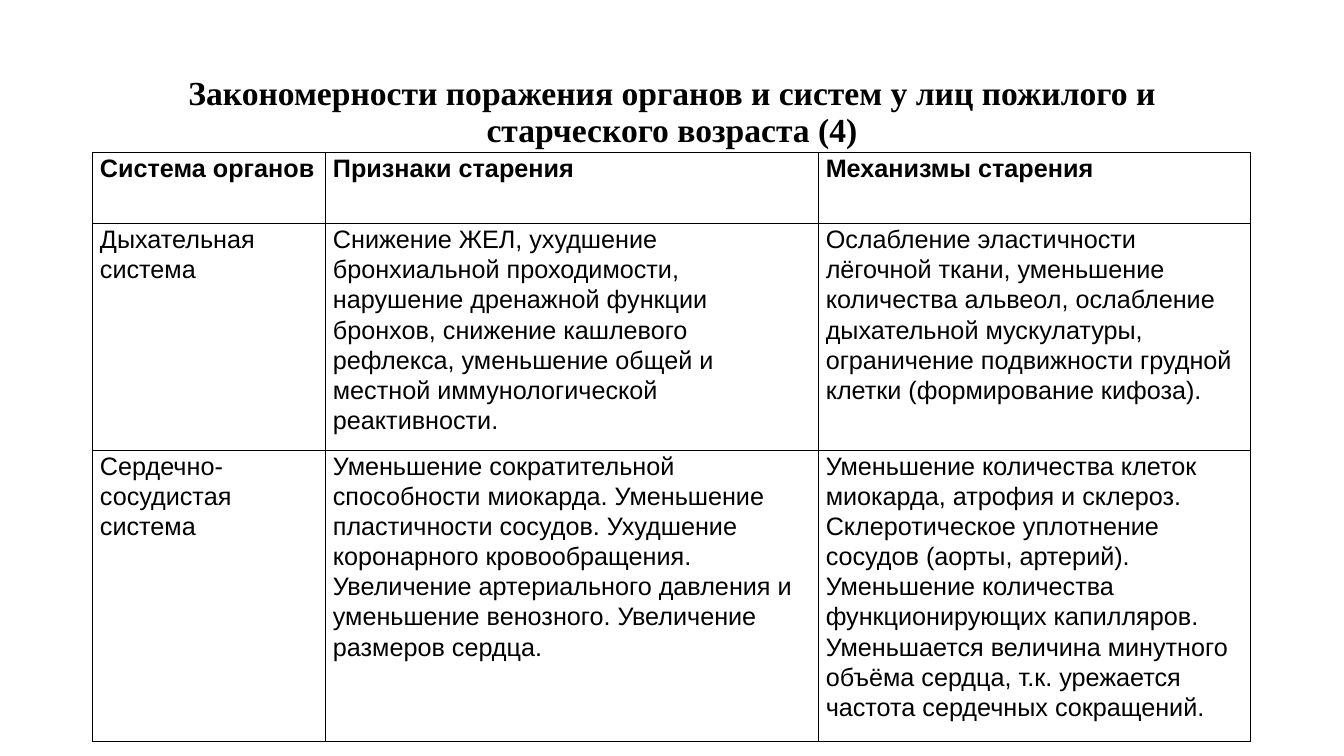
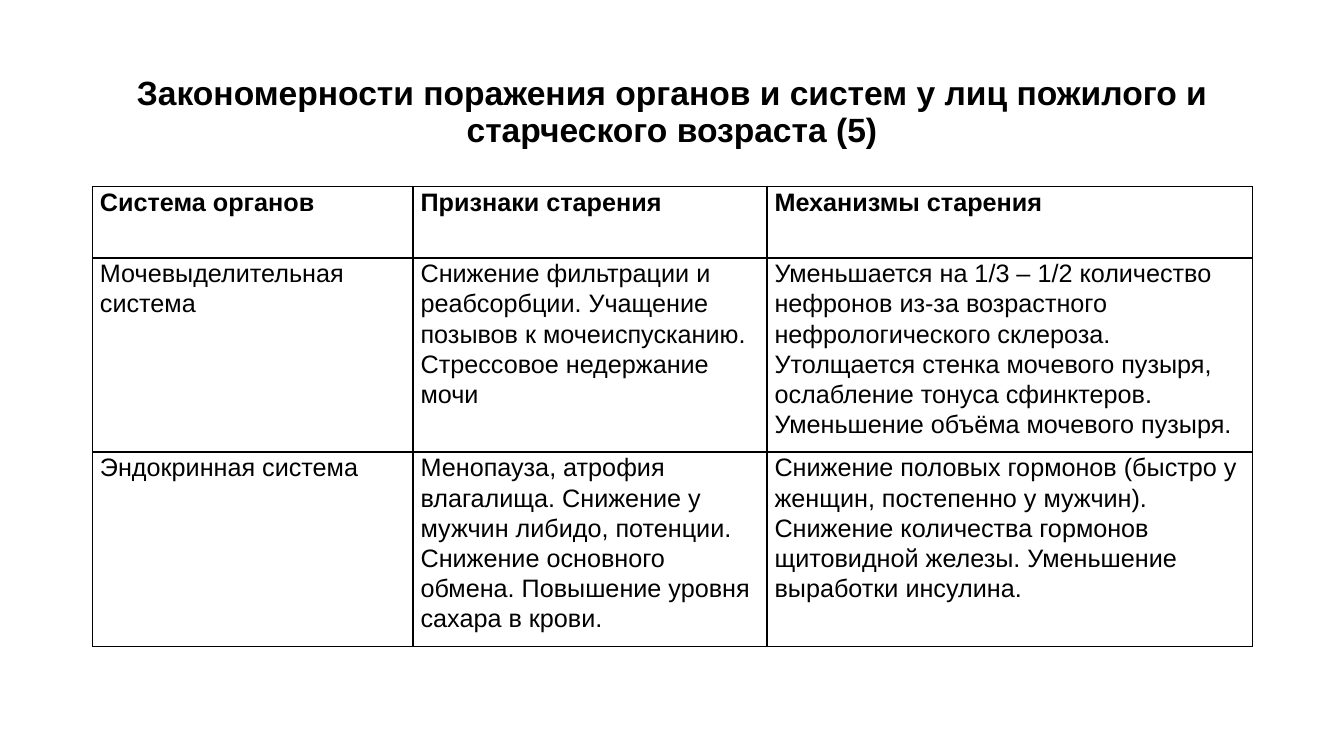
"""Build two slides with tables on ageing of organs and systems."""
import pptx
import pptx.dml.color
import pptx.enum.text
import pptx.util
from lxml import etree
from pptx.util import Cm, Pt

TITLE = "Закономерности поражения органов и систем у лиц пожилого и старческого возраста ({})"
HEADERS = ["Система органов", "Признаки старения", "Механизмы старения"]
SLIDES = [
    {
        "number": 4,
        "title_font": "Times New Roman",
        "top": 3.84,
        "widths": [5.87, 12.42, 10.9],
        "heights": [1.8, 5.33, 6.85],
        "systems": [
            (
                "Дыхательная система",
                "Снижение ЖЕЛ, ухудшение бронхиальной проходимости, нарушение дренажной "
                "функции бронхов, снижение кашлевого рефлекса, уменьшение общей и местной "
                "иммунологической реактивности.",
                "Ослабление эластичности лёгочной ткани, уменьшение количества альвеол, "
                "ослабление дыхательной мускулатуры, ограничение подвижности грудной клетки "
                "(формирование кифоза).",
            ),
            (
                "Сердечно-сосудистая система",
                "Уменьшение сократительной способности миокарда. Уменьшение пластичности "
                "сосудов. Ухудшение коронарного кровообращения. Увеличение артериального "
                "давления и уменьшение венозного. Увеличение размеров сердца.",
                "Уменьшение количества клеток миокарда, атрофия и склероз. Склеротическое "
                "уплотнение сосудов (аорты, артерий). Уменьшение количества функционирующих "
                "капилляров. Уменьшается величина минутного объёма сердца, т.к. урежается "
                "частота сердечных сокращений.",
            ),
        ],
    },
    {
        "number": 5,
        "title_font": "Arial",
        "top": 4.7,
        "widths": [8.08, 8.92, 12.23],
        "heights": [1.8, 4.57, 4.57],
        "systems": [
            (
                "Мочевыделительная система",
                "Снижение фильтрации и реабсорбции. Учащение позывов к мочеиспусканию. "
                "Стрессовое недержание мочи",
                "Уменьшается на 1/3 – 1/2 количество нефронов из-за возрастного "
                "нефрологического склероза. Утолщается стенка мочевого пузыря, ослабление "
                "тонуса сфинктеров. Уменьшение объёма мочевого пузыря.",
            ),
            (
                "Эндокринная система",
                "Менопауза, атрофия влагалища. Снижение у мужчин либидо, потенции. Снижение "
                "основного обмена. Повышение уровня сахара в крови.",
                "Снижение половых гормонов (быстро у женщин, постепенно у мужчин). Снижение "
                "количества гормонов щитовидной железы. Уменьшение выработки инсулина.",
            ),
        ],
    },
]

INK = "000000"
BODY_FONT = "Arial"
LEFT, WIDTH = Cm(2.33), Cm(29.21)
ALIGN = pptx.enum.text.PP_ALIGN
ANCHOR = pptx.enum.text.MSO_ANCHOR
BORDER = (
    '<a:{side} xmlns:a="http://schemas.openxmlformats.org/drawingml/2006/main" w="12700">'
    '<a:solidFill><a:srgbClr val="{color}"/></a:solidFill></a:{side}>'
)


def rgb(color):
    return pptx.dml.color.RGBColor.from_string(color)


def write(frame, text, font, size, bold, align, spacing):
    frame.text = text
    frame.word_wrap = True
    paragraph = frame.paragraphs[0]
    paragraph.alignment = align
    paragraph.line_spacing = spacing
    run_font = paragraph.runs[0].font
    run_font.name, run_font.size, run_font.bold = font, Pt(size), bold
    run_font.color.rgb = rgb(INK)


def add_title(slide, number, font):
    title = slide.shapes.add_textbox(LEFT, Cm(1.01), WIDTH, Cm(3.68))
    write(title.text_frame, TITLE.format(number), font, 24, True, ALIGN.CENTER, 0.9)
    title.text_frame.vertical_anchor = ANCHOR.MIDDLE


def style_cell(cell):
    cell.margin_left = cell.margin_right = Cm(0.19)
    cell.margin_top = cell.margin_bottom = 0
    properties = cell._tc.get_or_add_tcPr()
    for side in ("lnL", "lnR", "lnT", "lnB"):
        properties.append(etree.fromstring(BORDER.format(side=side, color=INK)))
    cell.fill.background()


def add_systems_table(slide, top, widths, heights, systems):
    rows = [HEADERS, *systems]
    table = slide.shapes.add_table(
        len(rows), len(HEADERS), LEFT, Cm(top), WIDTH, Cm(sum(heights))
    ).table
    table.horz_banding = False
    for column, width in zip(table.columns, widths):
        column.width = Cm(width)
    for r, (row, height) in enumerate(zip(rows, heights)):
        table.rows[r].height = Cm(height)
        for c, text in enumerate(row):
            cell = table.cell(r, c)
            style_cell(cell)
            align = ALIGN.JUSTIFY if r == 0 or c == 0 else ALIGN.LEFT
            write(cell.text_frame, text, BODY_FONT, 18, r == 0, align, 1.07)


def main():
    deck = pptx.Presentation()
    deck.slide_width, deck.slide_height = Cm(33.87), Cm(19.05)
    for content in SLIDES:
        slide = deck.slides.add_slide(deck.slide_layouts[6])
        add_title(slide, content["number"], content["title_font"])
        add_systems_table(
            slide, content["top"], content["widths"], content["heights"], content["systems"]
        )
    deck.save("out.pptx")


if __name__ == "__main__":
    main()
